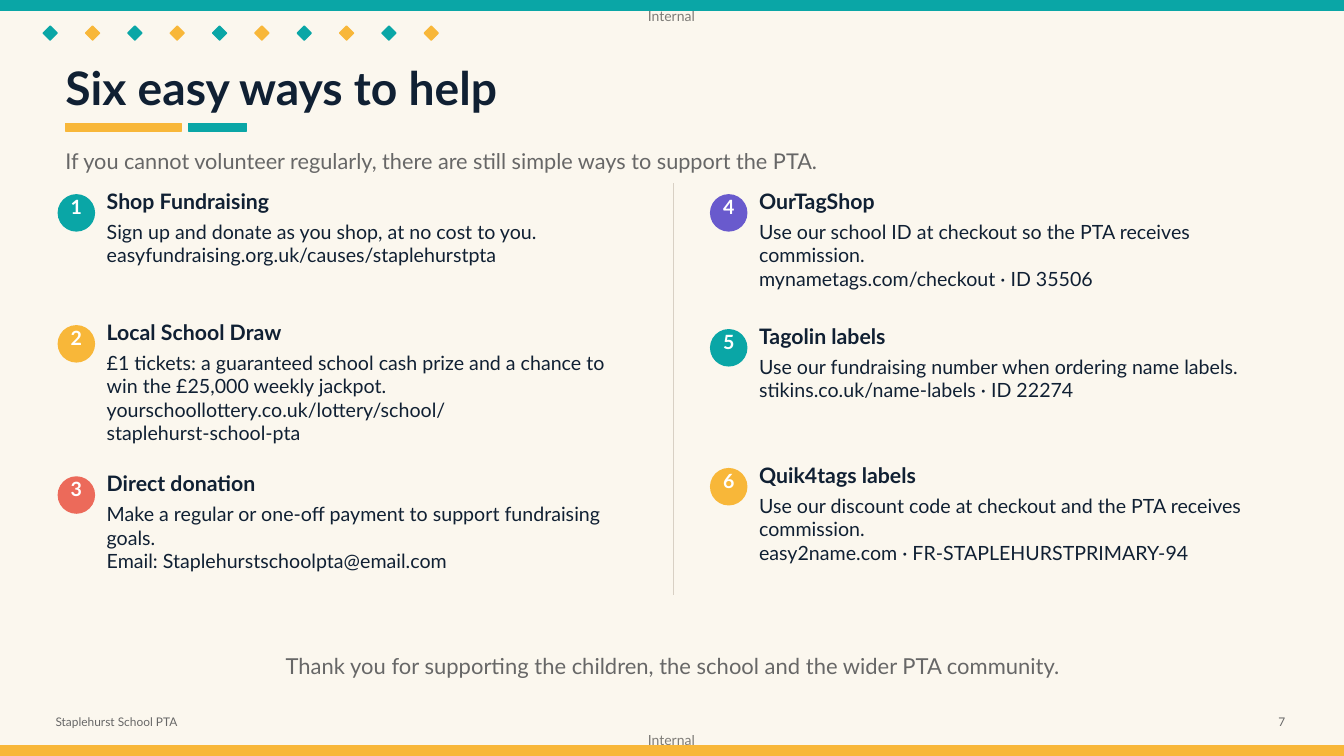
from lxml import etree
from pptx import Presentation
from pptx.dml.color import RGBColor
from pptx.enum.shapes import MSO_CONNECTOR, MSO_SHAPE
from pptx.enum.text import MSO_ANCHOR, PP_ALIGN
from pptx.oxml.ns import qn
from pptx.util import Cm, Pt

RECTANGLE, OVAL = MSO_SHAPE.RECTANGLE, MSO_SHAPE.OVAL
STRAIGHT = MSO_CONNECTOR.STRAIGHT
TOP, MIDDLE = MSO_ANCHOR.TOP, MSO_ANCHOR.MIDDLE
LEFT, CENTER, RIGHT = PP_ALIGN.LEFT, PP_ALIGN.CENTER, PP_ALIGN.RIGHT

THEME = {
    "font": "Lato",
    "colors": {
        "paper": "FBF7EE", "ink": "102033", "gray": "676767",
        "teal": "0AA6A6", "yellow": "F8B739", "coral": "EC6A5A",
        "violet": "695ACD", "rule": "D8D0C4", "white": "FFFFFF",
        "black": "000000",
    },
    # style: size, color, bold, line spacing
    "styles": {
        "title": (33, "ink", True, None),
        "subtitle": (15.5, "gray", False, None),
        "closing": (15.7, "gray", False, None),
        "heading": (15.2, "ink", True, 0.9),
        "body": (14, "ink", False, None),
        "number": (14, "white", True, 0.9),
        "footer": (8.5, "gray", False, None),
        "label": (10, "black", False, None),
    },
}
COLORS = {name: RGBColor.from_string(value) for name, value in THEME["colors"].items()}

presentation = Presentation()
presentation.slide_width, presentation.slide_height = Cm(33.87), Cm(19.05)
slide = presentation.slides.add_slide(presentation.slide_layouts[6])
slide.background.fill.solid()
slide.background.fill.fore_color.rgb = COLORS["paper"]


def add_block(kind, left, top, width, height, color):
    shape = slide.shapes.add_shape(kind, Cm(left), Cm(top), Cm(width), Cm(height))
    shape.shadow.inherit = False
    shape.fill.solid()
    shape.fill.fore_color.rgb = shape.line.color.rgb = COLORS[color]
    shape.line.width = Pt(1)
    return shape


def add_text(lines, style, left, top, width, height, align=LEFT, anchor=MIDDLE, wrap=True):
    size, color, bold, spacing = THEME["styles"][style]
    box = slide.shapes.add_textbox(Cm(left), Cm(top), Cm(width), Cm(height))
    frame = box.text_frame
    frame_format = {"margin_left": 0, "margin_top": 0, "margin_right": 0,
                    "margin_bottom": 0, "word_wrap": wrap, "vertical_anchor": anchor}
    for name, value in frame_format.items():
        setattr(frame, name, value)
    frame.text = "\n".join(lines)
    font_format = {"name": THEME["font"], "size": Pt(size), "bold": bold}
    for paragraph in frame.paragraphs:
        paragraph.alignment = align
        paragraph.line_spacing = spacing
        font = paragraph.runs[0].font
        for name, value in font_format.items():
            setattr(font, name, value)
        font.color.rgb = COLORS[color]
    return box


# Half-transparent classification labels, partly behind the edge bars
for top in (0.18, 18.44):
    label = add_text(["Internal"], "label", 16.33, top, 1.24, 0.43, anchor=TOP, wrap=False)
    for color_element in label.text_frame._txBody.iter(qn("a:srgbClr")):
        etree.SubElement(color_element, qn("a:alpha"), val="50000")

# Edge bars
add_block(RECTANGLE, 0, 0, 33.87, 0.25, "teal")
add_block(RECTANGLE, 0, 18.8, 33.87, 0.25, "yellow")

# Row of diamonds
for index in range(10):
    diamond = add_block(RECTANGLE, 1.14 + index * 1.067, 0.71, 0.25, 0.25,
                        ("teal", "yellow")[index % 2])
    diamond.rotation = 45

# Footer
add_text(["Staplehurst School PTA"], "footer", 1.4, 17.91, 8.38, 0.56)
add_text(["7"], "footer", 31.37, 17.91, 1.02, 0.56, align=RIGHT)

# Title, underline and subtitle
add_text(["Six easy ways to help"], "title", 1.65, 1.4, 22.1, 1.57)
add_block(RECTANGLE, 1.65, 3.12, 2.92, 0.18, "yellow")
add_block(RECTANGLE, 4.75, 3.12, 1.47, 0.18, "teal")
add_text(["If you cannot volunteer regularly, there are still simple ways to support the PTA."],
         "subtitle", 1.65, 3.51, 24.13, 1.07)

# Ways to help, in two columns: heading top, badge color, heading, body height, body
COLUMNS = [
    (1.47, [
        (4.78, "teal", "Shop Fundraising", 2.24,
         ["Sign up and donate as you shop, at no cost to you.",
          "easyfundraising.org.uk/causes/staplehurstpta"]),
        (8.08, "yellow", "Local School Draw", 2.64,
         ["£1 tickets: a guaranteed school cash prize and a chance to win the £25,000 weekly jackpot.",
          "yourschoollottery.co.uk/lottery/school/",
          "staplehurst-school-pta"]),
        (11.89, "coral", "Direct donation", 1.98,
         ["Make a regular or one-off payment to support fundraising goals.",
          "Email: Staplehurstschoolpta@email.com"]),
    ]),
    (17.91, [
        (4.78, "violet", "OurTagShop", 2.24,
         ["Use our school ID at checkout so the PTA receives commission.",
          "mynametags.com/checkout · ID 35506"]),
        (8.18, "teal", "Tagolin labels", 1.98,
         ["Use our fundraising number when ordering name labels.",
          "stikins.co.uk/name-labels · ID 22274"]),
        (11.68, "yellow", "Quik4tags labels", 2.08,
         ["Use our discount code at checkout and the PTA receives commission.",
          "easy2name.com · FR-STAPLEHURSTPRIMARY-94"]),
    ]),
]
number = 0
for left, ways in COLUMNS:
    for top, color, heading, body_height, body in ways:
        number += 1
        add_block(OVAL, left, top + 0.13, 0.91, 0.91, color)
        add_text([str(number)], "number", left, top + 0.19, 0.91, 0.56, align=CENTER)
        add_text([heading], "heading", left + 1.22, top, 12.62, 0.64)
        add_text(body, "body", left + 1.22, top + 0.76, 12.62, body_height, anchor=TOP)

# Column divider
divider = slide.shapes.add_connector(STRAIGHT, Cm(16.97), Cm(4.62), Cm(16.97), Cm(14.99))
divider.line.color.rgb = COLORS["rule"]
divider.line.width = Pt(1)
etree.SubElement(divider._element.spPr, qn("a:effectLst"))

# Closing line
add_text(["Thank you for supporting the children, the school and the wider PTA community."],
         "closing", 2.16, 16.38, 29.59, 0.81, align=CENTER)

presentation.save("out.pptx")
